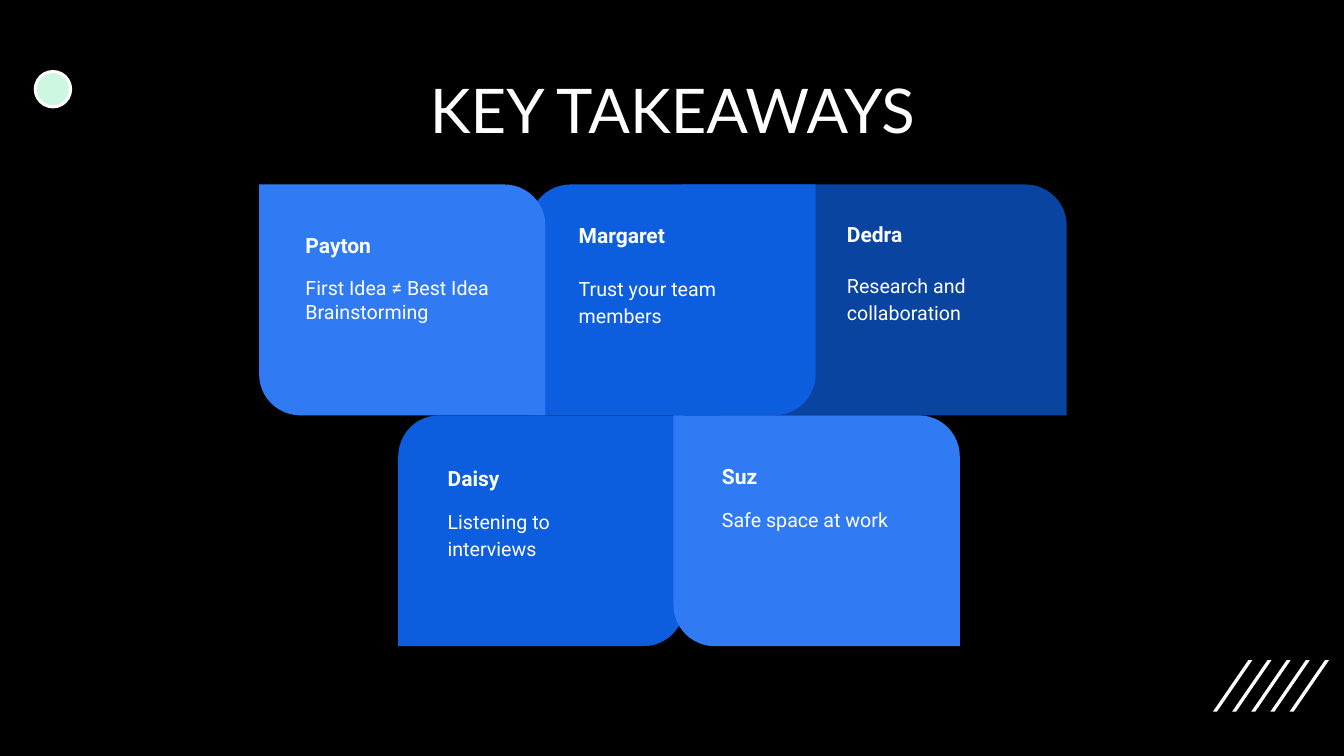
from pptx import Presentation
from pptx.dml.color import RGBColor
from pptx.enum.shapes import MSO_SHAPE
from pptx.enum.text import MSO_ANCHOR, PP_ALIGN
from pptx.util import Inches, Pt

OVAL = MSO_SHAPE.OVAL
CARD = MSO_SHAPE.ROUND_2_DIAG_RECTANGLE
MIDDLE, TOP = MSO_ANCHOR.MIDDLE, MSO_ANCHOR.TOP
CENTER, LEFT = PP_ALIGN.CENTER, PP_ALIGN.LEFT

BLACK = RGBColor(0x00, 0x00, 0x00)
WHITE = RGBColor(0xFF, 0xFF, 0xFF)
MINT = RGBColor(0xCD, 0xF7, 0xE0)
NAVY = RGBColor(0x09, 0x44, 0xA1)
BLUE = RGBColor(0x0D, 0x5D, 0xDF)
SKY = RGBColor(0x30, 0x7B, 0xF3)

# Content
TITLE = "KEY TAKEAWAYS"
# name, takeaway, row, left, width, fill, rounded corners, line spacing,
# text inset from card: (left, name top, takeaway top); back to front
CARDS = [
    ("Dedra", "Research and collaboration", 0, 6.76, 3.82, NAVY,
     "rising", 1.15, (1.51, 0.24, 0.72)),
    ("Margaret", "Trust your team members", 0, 5.25, 2.84, BLUE,
     "falling", 1.15, (0.36, 0.25, 0.75)),
    ("Payton", "First Idea ≠ Best Idea Brainstorming", 0, 2.57, 2.84, SKY,
     "rising", 1.0, (0.33, 0.35, 0.78)),
    ("Daisy", "Listening to interviews", 1, 3.95, 2.84, BLUE,
     "falling", 1.15, (0.36, 0.37, 0.77)),
    ("Suz", "Safe space at work", 1, 6.68, 2.84, SKY,
     "rising", 1.15, (0.35, 0.35, 0.75)),
]

# Grid, in inches
ROW_TOP, ROW_H = 1.83, 2.29
TEXT_W, NAME_H, BODY_H, PAD = 2.12, 0.67, 0.75, 0.13
CORNERS = {"rising": (0, 0.178), "falling": (0.178, 0)}
STRIPES, STRIPE_LEFT, STRIPE_TOP = 5, 12.03, 6.55
STRIPE_STEP, STRIPE_H, STRIPE_W, STRIPE_LEAN = 0.19, 0.51, 0.04, 0.35

prs = Presentation()
prs.slide_width, prs.slide_height = Inches(13.33), Inches(7.5)
s = prs.slides.add_slide(prs.slide_layouts[5])
s.background.fill.solid()
s.background.fill.fore_color.rgb = BLACK


def paint(sp, color):
    sp.shadow.inherit = False
    sp.fill.solid()
    sp.fill.fore_color.rgb = color
    sp.line.fill.background()


def write(tf, text, size, font, bold=False, align=LEFT, spacing=1.0, after=0):
    tf.word_wrap = True
    p = tf.paragraphs[0]
    p.alignment, p.line_spacing, p.space_after = align, spacing, Pt(after)
    r = p.add_run()
    r.text = text
    r.font.name, r.font.size, r.font.bold = font, Pt(size), bold
    r.font.color.rgb = WHITE


def add_text(left, top, height, text, size, **style):
    box = s.shapes.add_textbox(*map(Inches, (left, top, TEXT_W, height)))
    tf = box.text_frame
    tf.margin_left = tf.margin_right = Inches(PAD)
    tf.margin_top = tf.margin_bottom = Inches(PAD)
    tf.vertical_anchor = TOP
    write(tf, text, size, "Roboto", **style)


# Title
title = s.shapes.title
title.left, title.top, title.width, title.height = map(
    Inches, (0.92, 0.4, 11.5, 1.45))
title.text_frame.vertical_anchor = MIDDLE
write(title.text_frame, TITLE, 44, "Lato", align=CENTER, spacing=0.9)

# Corner stripes
for i in range(STRIPES):
    x, bottom = STRIPE_LEFT + i * STRIPE_STEP, STRIPE_TOP + STRIPE_H
    outline = [(x, bottom), (x + STRIPE_LEAN, STRIPE_TOP),
               (x + STRIPE_LEAN + STRIPE_W, STRIPE_TOP),
               (x + STRIPE_W, bottom)]
    points = [(Inches(px), Inches(py)) for px, py in outline]
    builder = s.shapes.build_freeform(*points[0])
    builder.add_line_segments(points[1:], close=True)
    paint(builder.convert_to_shape(), WHITE)

# Corner dot
dot = s.shapes.add_shape(OVAL, *map(Inches, (0.35, 0.71, 0.35, 0.35)))
paint(dot, MINT)
dot.line.color.rgb = WHITE
dot.line.width = Pt(2.25)

# Takeaway cards
for name, body, row, left, width, fill, corners, spacing, inset in CARDS:
    top = ROW_TOP + row * ROW_H
    card = s.shapes.add_shape(CARD, *map(Inches, (left, top, width, ROW_H)))
    paint(card, fill)
    card.adjustments[0], card.adjustments[1] = CORNERS[corners]
    dx, name_dy, body_dy = inset
    add_text(left + dx, top + name_dy, NAME_H, name, 15, bold=True)
    add_text(left + dx, top + body_dy, BODY_H, body, 14,
             spacing=spacing, after=21)

prs.save("out.pptx")
